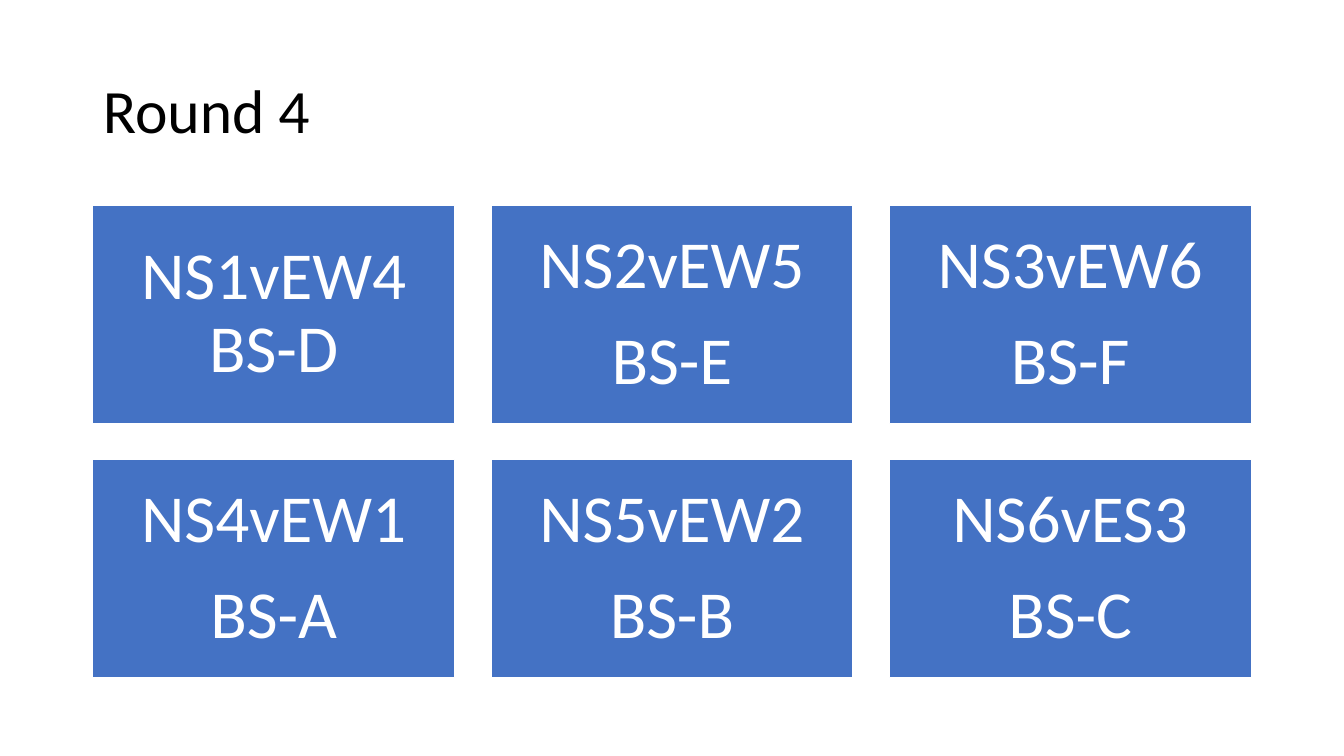
from pptx import Presentation
from pptx import util as u
from pptx.dml.color import RGBColor
from pptx.enum import shapes, text

BLACK = RGBColor(0x00, 0x00, 0x00)
WHITE = RGBColor(0xFF, 0xFF, 0xFF)
BLUE = RGBColor(0x44, 0x72, 0xC4)
FONT = "Calibri"

COLUMNS = 3
MATCHES = [
    ["NS1vEW4 BS-D"],  # one paragraph, wrapped by the tile
    ["NS2vEW5", "BS-E"],
    ["NS3vEW6", "BS-F"],
    ["NS4vEW1", "BS-A"],
    ["NS5vEW2", "BS-B"],
    ["NS6vES3", "BS-C"],
]


def add_span(para, words, size, color):
    para.line_spacing = 0.9
    span = para.add_run()
    span.text = words
    span.font.name = FONT
    span.font.size = u.Pt(size)
    span.font.color.rgb = color


def place_title(page, words, left, top, width, height):
    title = page.shapes.title
    title.left, title.top = u.Inches(left), u.Inches(top)
    title.width, title.height = u.Inches(width), u.Inches(height)
    frame = title.text_frame
    frame.vertical_anchor = text.MSO_ANCHOR.MIDDLE
    para = frame.paragraphs[0]
    para.alignment = text.PP_ALIGN.LEFT
    add_span(para, words, 44, BLACK)


def add_tile(page, lines, left, top, width, height):
    tile = page.shapes.add_shape(
        shapes.MSO_SHAPE.RECTANGLE,
        u.Inches(left), u.Inches(top), u.Inches(width), u.Inches(height))
    tile.shadow.inherit = False
    tile.fill.solid()
    tile.fill.fore_color.rgb = BLUE
    tile.line.color.rgb = WHITE
    tile.line.width = u.Pt(1)

    frame = tile.text_frame
    frame.word_wrap = True
    frame.vertical_anchor = text.MSO_ANCHOR.MIDDLE
    frame.margin_left = frame.margin_right = u.Inches(0.2)
    frame.margin_top = frame.margin_bottom = u.Inches(0.2)
    for index, line in enumerate(lines):
        para = frame.add_paragraph() if index else frame.paragraphs[0]
        para.alignment = text.PP_ALIGN.CENTER
        para.space_after = u.Pt(16.8)
        add_span(para, line, 48, WHITE)


def add_match_grid(page, matches, left, top, width, height, gap):
    rows = -(-len(matches) // COLUMNS)
    tile_width = (width - gap * (COLUMNS - 1)) / COLUMNS
    tile_height = (height - gap * (rows - 1)) / rows
    for index, lines in enumerate(matches):
        row, column = divmod(index, COLUMNS)
        add_tile(page, lines,
                 left + column * (tile_width + gap),
                 top + row * (tile_height + gap),
                 tile_width, tile_height)


def main():
    deck = Presentation()
    deck.slide_width, deck.slide_height = u.Inches(13.33), u.Inches(7.5)
    page = deck.slides.add_slide(deck.slide_layouts[5])

    # Heading
    place_title(page, "Round 4", 0.92, 0.4, 11.5, 1.45)
    # Pairings with their board sets
    add_match_grid(page, MATCHES, 0.92, 2.04, 11.49, 4.68, 0.36)

    deck.save("out.pptx")


if __name__ == "__main__":
    main()
